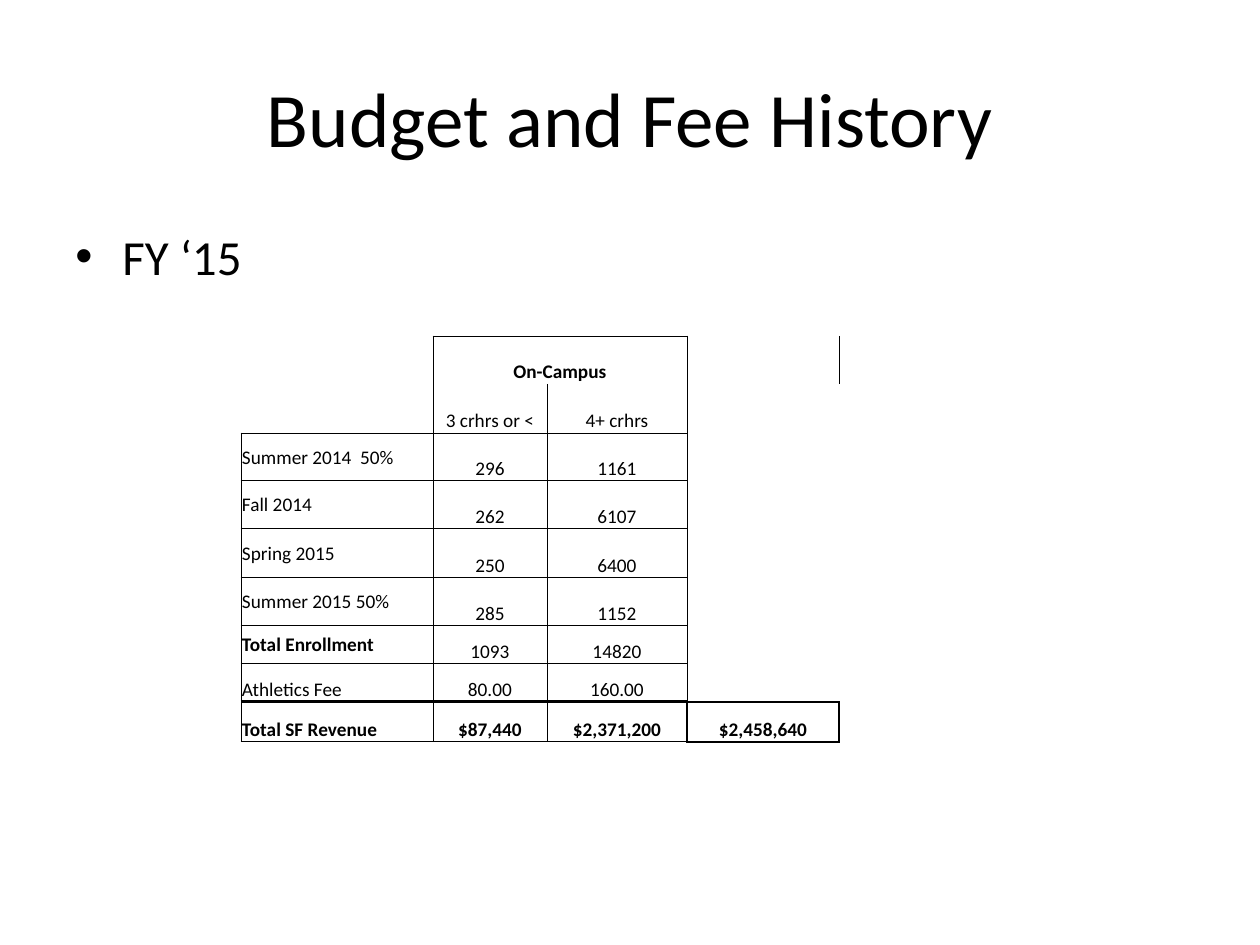
"""Build the budget and fee history slide."""
import dataclasses

import lxml.etree
import pptx
import pptx.dml.color
import pptx.enum.text
import pptx.oxml.ns
import pptx.util

SCALE = 914400 / 126
FONT = "Calibri"
INK = "000000"
ALIGN = pptx.enum.text.PP_ALIGN
ANCHOR = pptx.enum.text.MSO_ANCHOR
PLAIN_STYLE = "{2D5ABB26-0587-4C30-8999-92F81FD0307C}"


@dataclasses.dataclass(frozen=True)
class Edge:
    left: float = 0
    right: float = 0
    top: float = 0
    base: float = 0


@dataclasses.dataclass(frozen=True)
class Cell:
    text: str = ""
    edge: Edge = Edge(0.5, 0.5, 0.5, 0.5)
    bold: bool = False
    mid: bool = False


@dataclasses.dataclass(frozen=True)
class Box:
    left: int
    top: int
    width: int
    height: int


def px(count: int) -> int:
    return round(count * SCALE)


def tint(value: str) -> pptx.dml.color.RGBColor:
    return pptx.dml.color.RGBColor.from_string(value)


def tag(parent, name: str, **attrs: str):
    return lxml.etree.SubElement(parent, pptx.oxml.ns.qn(name), attrs)


def add_run(para, text: str, size: int, bold: bool = False) -> None:
    run = para.add_run()
    run.text = text
    run.font.name = FONT
    run.font.size = pptx.util.Pt(size)
    run.font.bold = bold
    run.font.color.rgb = tint(INK)


def add_box(slide, box: Box):
    shape = slide.shapes.add_textbox(
        px(box.left), px(box.top), px(box.width), px(box.height))
    shape.text_frame.word_wrap = True
    return shape.text_frame


def add_title(slide, text: str) -> None:
    frame = add_box(slide, Box(63, 38, 1134, 157))
    frame.vertical_anchor = ANCHOR.MIDDLE
    para = frame.paragraphs[0]
    para.alignment = ALIGN.CENTER
    add_run(para, text, 44)


def add_point(slide, text: str) -> None:
    para = add_box(slide, Box(63, 220, 1102, 624)).paragraphs[0]
    props = para._p.get_or_add_pPr()
    props.set("marL", str(px(47)))
    props.set("indent", str(-px(47)))
    tag(props, "a:buFont", typeface="Arial")
    tag(props, "a:buChar", char="•")
    add_run(para, text, 28)


def draw_edge(cell, edge: Edge) -> None:
    props = cell._tc.get_or_add_tcPr()
    sides = {"a:lnL": edge.left, "a:lnR": edge.right,
             "a:lnT": edge.top, "a:lnB": edge.base}
    lines = []
    for name, width in sides.items():
        if width:
            line = tag(props, name, w=str(pptx.util.Pt(width)))
            tag(tag(line, "a:solidFill"), "a:srgbClr", val=INK)
            lines.append(line)
    for spot, line in enumerate(lines):
        props.insert(spot, line)


def fill_cell(cell, data: Cell, col: int) -> None:
    cell.fill.background()
    cell.margin_left = cell.margin_right = cell.margin_top = px(1)
    cell.margin_bottom = 0
    cell.vertical_anchor = ANCHOR.MIDDLE if data.mid else ANCHOR.BOTTOM
    para = cell.text_frame.paragraphs[0]
    para.alignment = ALIGN.CENTER if col else ALIGN.LEFT
    if data.text:
        add_run(para, data.text, 11, data.bold)
    else:
        tag(para._p, "a:endParaRPr", sz="1100")
    draw_edge(cell, data.edge)


def add_grid(slide, rows: list[list[Cell]]) -> None:
    wide = [192, 114, 140, 152]
    high = [48, 49, 48, 48, 49, 48, 38, 38, 40]
    frame = slide.shapes.add_table(
        len(rows), len(wide), px(241), px(336), px(sum(wide)), px(sum(high)))
    table = frame.table
    table.first_row = table.horz_banding = False
    table._tbl.tblPr.find(pptx.oxml.ns.qn("a:tableStyleId")).text = PLAIN_STYLE
    for col, width in zip(table.columns, wide):
        col.width = px(width)
    for row, height in zip(table.rows, high):
        row.height = px(height)
    for r, row in enumerate(rows):
        for c, data in enumerate(row):
            fill_cell(table.cell(r, c), data, c)
    table.cell(0, 1).merge(table.cell(0, 2))


def fee_rows() -> list[list[Cell]]:
    thin, thick = 0.5, 2
    side = Cell(edge=Edge(left=thin))
    fee = Edge(thin, thin, thin, thick)
    total = Edge(thin, thin, thick, thin)
    terms = [
        ("Summer 2014  50%", "296", "1161"),
        ("Fall 2014", "262", "6107"),
        ("Spring 2015", "250", "6400"),
        ("Summer 2015 50%", "285", "1152"),
        ("Total Enrollment", "1093", "14820"),
    ]
    head = [
        [Cell(edge=Edge(right=thin)),
         Cell("On-Campus", Edge(thin, thin, thin), True),
         Cell(edge=Edge(right=thin, top=thin)), side],
        [Cell(edge=Edge(right=thin, base=thin)),
         Cell("3 crhrs or <", Edge(left=thin, base=thin)),
         Cell("4+ crhrs", Edge(right=thin, base=thin)), side],
    ]
    body = [
        [Cell(name, bold=name.startswith("Total"), mid=True),
         Cell(low), Cell(full), side]
        for name, low, full in terms
    ]
    foot = [
        [Cell(text, fee) for text in ("Athletics Fee", "80.00", "160.00")]
        + [Cell(edge=Edge(left=thin, base=1))],
        [Cell("Total SF Revenue", total, True), Cell("$87,440", total, True),
         Cell("$2,371,200", Edge(thin, 1, thick, thin), True),
         Cell("$2,458,640", Edge(1, 1, 1, 1), True)],
    ]
    return head + body + foot


def main() -> None:
    deck = pptx.Presentation()
    deck.slide_width, deck.slide_height = px(1260), px(945)
    slide = deck.slides.add_slide(deck.slide_layouts[6])
    add_title(slide, "Budget and Fee History")
    add_point(slide, "FY ‘15")
    add_grid(slide, fee_rows())
    deck.save("out.pptx")


if __name__ == "__main__":
    main()
